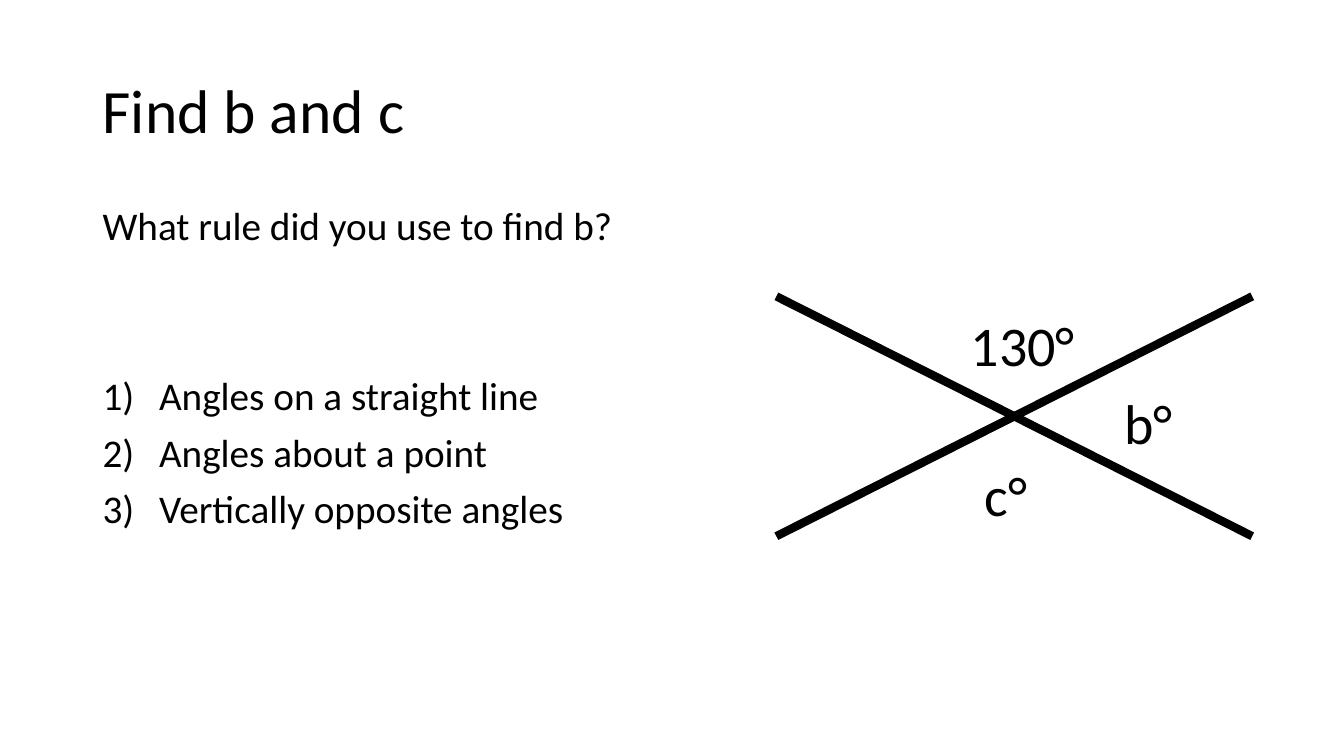
from lxml import etree
from pptx import Presentation
from pptx.dml.color import RGBColor
from pptx.enum import shapes, text
from pptx.oxml import ns
from pptx.util import Inches, Pt

# Content
TITLE = "Find b and c"
QUESTION = "What rule did you use to find b?"
RULES = ["Angles on a straight line", "Angles about a point", "Vertically opposite angles"]
ANGLES = [  # label, left, top, width
    ("130°", 9.53, 3.03, 1.51),
    ("b°", 11.05, 3.81, 1.12),
    ("c°", 9.67, 4.52, 1.12),
]
CROSS = {"left": 7.7, "top": 2.94, "right": 12.42, "bottom": 5.32}

# Style
FONT, INK = "Calibri", "000000"
BODY = {"line_spacing": 0.9, "space_before": Pt(10)}
FIRST_RULE = {"line_spacing": 0.9, "space_before": Pt(91.5)}
INDENT = Inches(0.56)

presentation = Presentation()
presentation.slide_width, presentation.slide_height = Inches(13.33), Inches(7.5)
slide = presentation.slides.add_slide(presentation.slide_layouts[6])


def color(value):
    return RGBColor.from_string(value)


def add_box(left, top, width, height, anchor=text.MSO_ANCHOR.TOP):
    frame = slide.shapes.add_textbox(*map(Inches, (left, top, width, height))).text_frame
    frame.word_wrap = True
    frame.vertical_anchor = anchor
    return frame


def write(paragraph, words, size, formats):
    run = paragraph.add_run()
    run.text = words
    for name, value in {"name": FONT, "size": Pt(size)}.items():
        setattr(run.font, name, value)
    run.font.color.rgb = color(INK)
    for name, value in formats.items():
        setattr(paragraph, name, value)


def number(paragraph):
    properties = paragraph._p.get_or_add_pPr()
    properties.set("marL", str(INDENT))
    properties.set("indent", str(-INDENT))
    etree.SubElement(properties, ns.qn("a:buFont"), typeface="+mj-lt")
    etree.SubElement(properties, ns.qn("a:buAutoNum"), type="arabicParenR")


# Title
title = add_box(0.92, 0.4, 11.5, 1.45, text.MSO_ANCHOR.MIDDLE)
write(title.paragraphs[0], TITLE, 44, {"line_spacing": 0.9})

# Question and numbered rules
body = add_box(0.92, 2, 11.5, 4.76)
write(body.paragraphs[0], QUESTION, 28, BODY)
for index, rule in enumerate(RULES):
    paragraph = body.add_paragraph()
    write(paragraph, rule, 28, BODY if index else FIRST_RULE)
    number(paragraph)

# Crossing lines
for start, end in (("left", "right"), ("right", "left")):
    ends = (CROSS[start], CROSS["top"], CROSS[end], CROSS["bottom"])
    line = slide.shapes.add_connector(shapes.MSO_CONNECTOR.STRAIGHT, *map(Inches, ends))
    line.line.color.rgb = color(INK)
    line.line.width = Pt(6)
    etree.SubElement(line._element.spPr, ns.qn("a:effectLst"))

# Angle labels
for label, left, top, width in ANGLES:
    write(add_box(left, top, width, 0.77).paragraphs[0], label, 40, {})

presentation.save("out.pptx")
